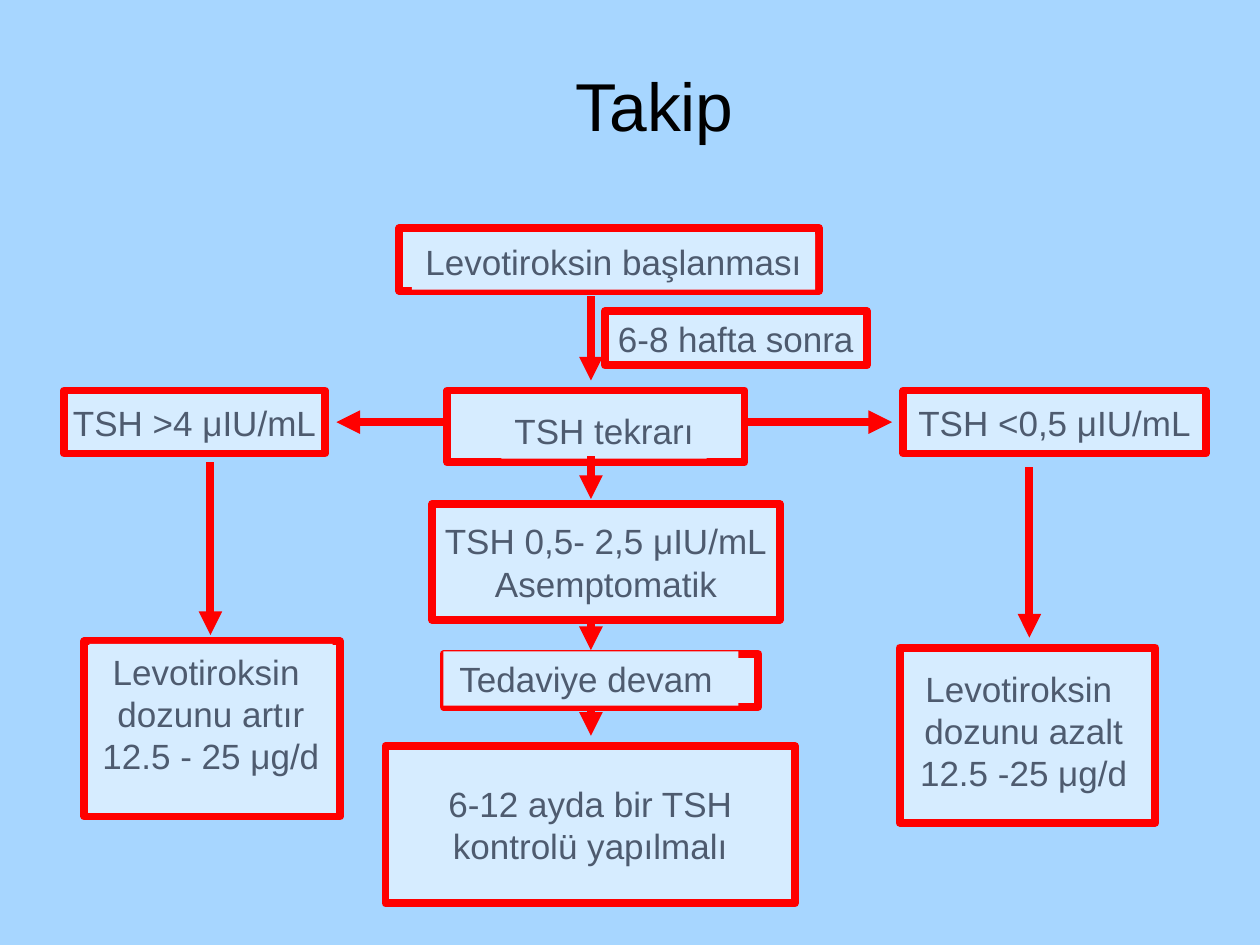
from lxml import etree
from pptx import Presentation
from pptx.dml.color import RGBColor
from pptx.enum.shapes import MSO_CONNECTOR, MSO_SHAPE
from pptx.enum.text import MSO_ANCHOR, PP_ALIGN
from pptx.oxml.ns import qn
from pptx.util import Inches, Pt

RECT, STRAIGHT = MSO_SHAPE.RECTANGLE, MSO_CONNECTOR.STRAIGHT
TOP, MIDDLE, BOTTOM = MSO_ANCHOR.TOP, MSO_ANCHOR.MIDDLE, MSO_ANCHOR.BOTTOM
CENTER = PP_ALIGN.CENTER

COLORS = {"background": "A7D6FF", "box": "D6ECFF", "red": "FF0000",
          "text": "4E5B6F", "title": "000000"}
FONT = "Arial"
TITLE_SIZE, TEXT_SIZE, LINE_WIDTH = 38.7, 20, 4.5

TITLE = ("Takip ", (1.22, 0.44, 8.1, 0.76))

# Boxes from back to front: place, text lines, anchor, wrap, and the place
# of a separate label panel where the text does not sit in the box itself.
BOXES = [
    ((0.51, 3.1, 2.07, 0.5), ["TSH >4 μIU/mL"], MIDDLE, False, None),
    ((7.17, 3.1, 2.4, 0.5), ["TSH <0,5 μIU/mL"], MIDDLE, False, None),
    ((3.17, 1.81, 3.33, 0.5), ["Levotiroksin başlanması"], TOP, True,
     (3.27, 1.86, 3.2, 0.44)),
    ((0.67, 5.09, 2.03, 1.39),
     ["Levotiroksin ", "dozunu artır", "12.5 - 25 μg/d"], TOP, False,
     (0.71, 5.11, 1.93, 1.11)),
    ((3.55, 3.1, 2.36, 0.57), ["TSH tekrarı"], TOP, False,
     (3.98, 3.2, 1.63, 0.44)),
    ((4.8, 2.47, 2.08, 0.43), ["6-8 hafta sonra"], TOP, False, None),
    ((3.43, 4, 2.76, 0.92), ["TSH 0,5- 2,5 μIU/mL", "Asemptomatik"],
     MIDDLE, False, None),
    ((3.06, 5.92, 3.25, 1.25), ["6-12 ayda bir TSH kontrolü yapılmalı"],
     MIDDLE, True, None),
    ((3.52, 5.19, 2.5, 0.42), ["Tedaviye devam "], TOP, True,
     (3.52, 5.17, 2.34, 0.43)),
    ((7.14, 5.14, 2.03, 1.39),
     ["Levotiroksin ", "dozunu azalt", "12.5 -25 μg/d"], TOP, False,
     (7.2, 5.25, 1.85, 1.11)),
]

# Arrows: start, end, ends that carry a head
SIDE_ARROWS = [
    ((8.17, 3.71), (8.17, 5.06), ["tailEnd"]),
    ((1.67, 3.67), (1.67, 5.04), ["tailEnd"]),
    ((7.08, 3.35), (2.67, 3.35), ["headEnd", "tailEnd"]),
]
CENTER_X = 4.69
CENTER_STEPS = [(2.35, 3.02), (3.62, 3.96), (4.94, 5.16), (5.61, 5.84)]


def rgb(name):
    return RGBColor.from_string(COLORS[name])


def write(sp, lines, anchor, wrap, size=TEXT_SIZE, color="text"):
    tf = sp.text_frame
    frame_format = {"word_wrap": wrap, "vertical_anchor": anchor,
                    "margin_left": Inches(0.1), "margin_right": Inches(0.1),
                    "margin_top": Inches(0.05), "margin_bottom": Inches(0.05)}
    for name, value in frame_format.items():
        setattr(tf, name, value)
    for i, line in enumerate(lines):
        p = tf.paragraphs[0] if i == 0 else tf.add_paragraph()
        p.alignment = CENTER
        r = p.add_run()
        r.text = line
        for name, value in {"name": FONT, "size": Pt(size)}.items():
            setattr(r.font, name, value)
        r.font.color.rgb = rgb(color)


def add_panel(s, place, outlined):
    sp = s.shapes.add_shape(RECT, *map(Inches, place))
    sp.shadow.inherit = False
    sp.fill.solid()
    sp.fill.fore_color.rgb = rgb("box")
    if outlined:
        sp.line.color.rgb = rgb("red")
        sp.line.width = Pt(LINE_WIDTH)
    else:
        sp.line.fill.background()
    return sp


def add_arrow(s, start, end, heads):
    c = s.shapes.add_connector(STRAIGHT, *map(Inches, start + end))
    c.line.color.rgb = rgb("red")
    c.line.width = Pt(LINE_WIDTH)
    ln = c.line._get_or_add_ln()
    for head in heads:
        etree.SubElement(ln, qn(f"a:{head}"), type="triangle")
    etree.SubElement(c._element.spPr, qn("a:effectLst"))


def main():
    prs = Presentation()
    prs.slide_width, prs.slide_height = Inches(10), Inches(7.5)
    s = prs.slides.add_slide(prs.slide_layouts[6])
    s.background.fill.solid()
    s.background.fill.fore_color.rgb = rgb("background")

    title, place = TITLE
    write(s.shapes.add_textbox(*map(Inches, place)), [title], BOTTOM, True,
          TITLE_SIZE, "title")

    for arrow in SIDE_ARROWS:
        add_arrow(s, *arrow)
    for place, lines, anchor, wrap, label_place in BOXES:
        sp = add_panel(s, place, True)
        if label_place:
            sp = add_panel(s, label_place, False)
        write(sp, lines, anchor, wrap)
    for top, bottom in CENTER_STEPS:
        add_arrow(s, (CENTER_X, top), (CENTER_X, bottom), ["tailEnd"])

    prs.save("out.pptx")


if __name__ == "__main__":
    main()
